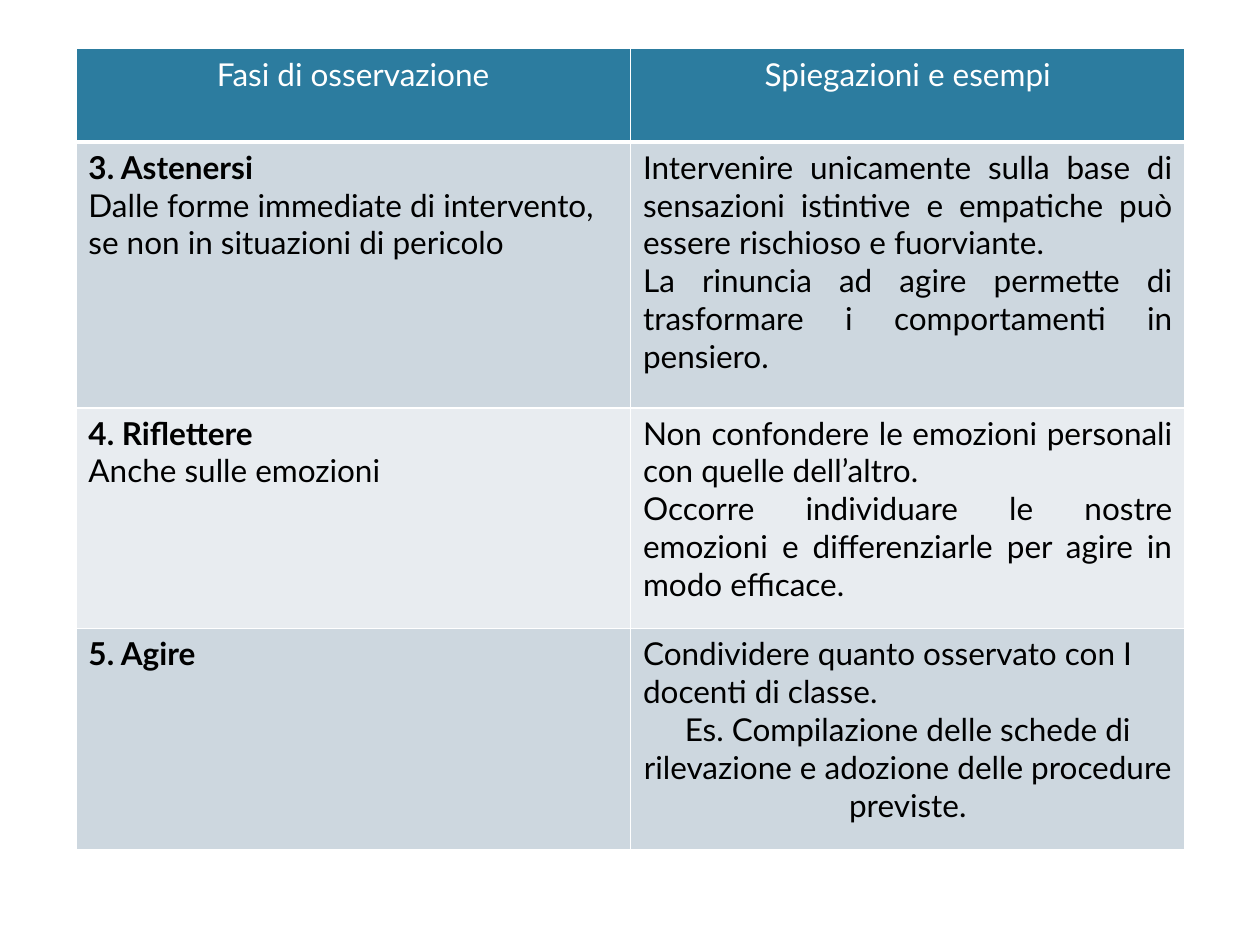
import pptx
import pptx.dml.color
import pptx.enum.text
import pptx.oxml
import pptx.oxml.ns
import pptx.util
from pptx.util import Cm

RGBColor = pptx.dml.color.RGBColor
ALIGN = pptx.enum.text.PP_ALIGN

WHITE = RGBColor(0xFF, 0xFF, 0xFF)
BLACK = RGBColor(0x00, 0x00, 0x00)
TEAL = RGBColor(0x2C, 0x7C, 0x9F)
BAND_DARK = RGBColor(0xCD, 0xD7, 0xDF)
BAND_LIGHT = RGBColor(0xE8, 0xEC, 0xF0)

# Content: header, then phase title, phase detail and (text, alignment) explanations
HEADERS = ["Fasi di osservazione", "Spiegazioni e esempi"]
PHASES = [
    ("3. Astenersi",
     "Dalle forme immediate di intervento, se non in situazioni di pericolo",
     [("Intervenire unicamente sulla base di sensazioni istintive e empatiche "
       "può essere rischioso e fuorviante.", ALIGN.JUSTIFY),
      ("La rinuncia ad agire permette di trasformare i comportamenti in pensiero.",
       ALIGN.JUSTIFY)]),
    ("4. Riflettere",
     "Anche sulle emozioni",
     [("Non confondere le emozioni personali con quelle dell’altro.", ALIGN.JUSTIFY),
      ("Occorre individuare le nostre emozioni e differenziarle per agire in "
       "modo efficace.", ALIGN.JUSTIFY)]),
    ("5. Agire",
     None,
     [("Condividere quanto osservato con I docenti di classe.", ALIGN.LEFT),
      ("Es. Compilazione delle schede di rilevazione e adozione delle procedure "
       "previste.", ALIGN.CENTER)]),
]
COLUMN_WIDTH = Cm(11.18)
ROW_HEIGHTS = [Cm(1.88), Cm(5.36), Cm(4.45), Cm(4.45)]


def add_text(cell, text, color=BLACK, bold=False, align=ALIGN.LEFT):
    """Write one paragraph, using the cell's first one while it is empty."""
    frame = cell.text_frame
    paragraph = frame.paragraphs[0] if not frame.text else frame.add_paragraph()
    paragraph.alignment = align
    run = paragraph.add_run()
    run.text = text
    run.font.name = "Lato"
    run.font.size = pptx.util.Pt(18)
    run.font.bold = bold
    run.font.color.rgb = color


def format_cell(cell, fill, bottom=1):
    """Fill the cell and give it white borders."""
    cell.fill.solid()
    cell.fill.fore_color.rgb = fill
    properties = cell._tc.get_or_add_tcPr()
    widths = {"lnL": 1, "lnR": 1, "lnT": 1, "lnB": bottom}
    for index, (side, width) in enumerate(widths.items()):
        border = pptx.oxml.parse_xml(
            f'<a:{side} {pptx.oxml.ns.nsdecls("a")} w="{pptx.util.Pt(width)}">'
            f'<a:solidFill><a:srgbClr val="{WHITE}"/></a:solidFill></a:{side}>')
        properties.insert(index, border)


presentation = pptx.Presentation()
presentation.slide_width = Cm(25.4)
presentation.slide_height = Cm(19.05)
slide = presentation.slides.add_slide(presentation.slide_layouts[6])

# Table grid
table = slide.shapes.add_table(
    len(ROW_HEIGHTS), len(HEADERS), Cm(1.53), Cm(0.98),
    COLUMN_WIDTH * len(HEADERS), sum(ROW_HEIGHTS)).table
for column in table.columns:
    column.width = COLUMN_WIDTH
for row, height in zip(table.rows, ROW_HEIGHTS):
    row.height = height

# Header row
for cell, header in zip(table.rows[0].cells, HEADERS):
    format_cell(cell, TEAL, bottom=3)
    add_text(cell, header, color=WHITE, align=ALIGN.CENTER)

# Phase rows in alternating bands
for number, (title, detail, explanations) in enumerate(PHASES, start=1):
    phase_cell, explanation_cell = table.rows[number].cells
    for cell in (phase_cell, explanation_cell):
        format_cell(cell, BAND_DARK if number % 2 else BAND_LIGHT)
    add_text(phase_cell, title, bold=True)
    if detail:
        add_text(phase_cell, detail)
    for text, align in explanations:
        add_text(explanation_cell, text, align=align)

presentation.save("out.pptx")
